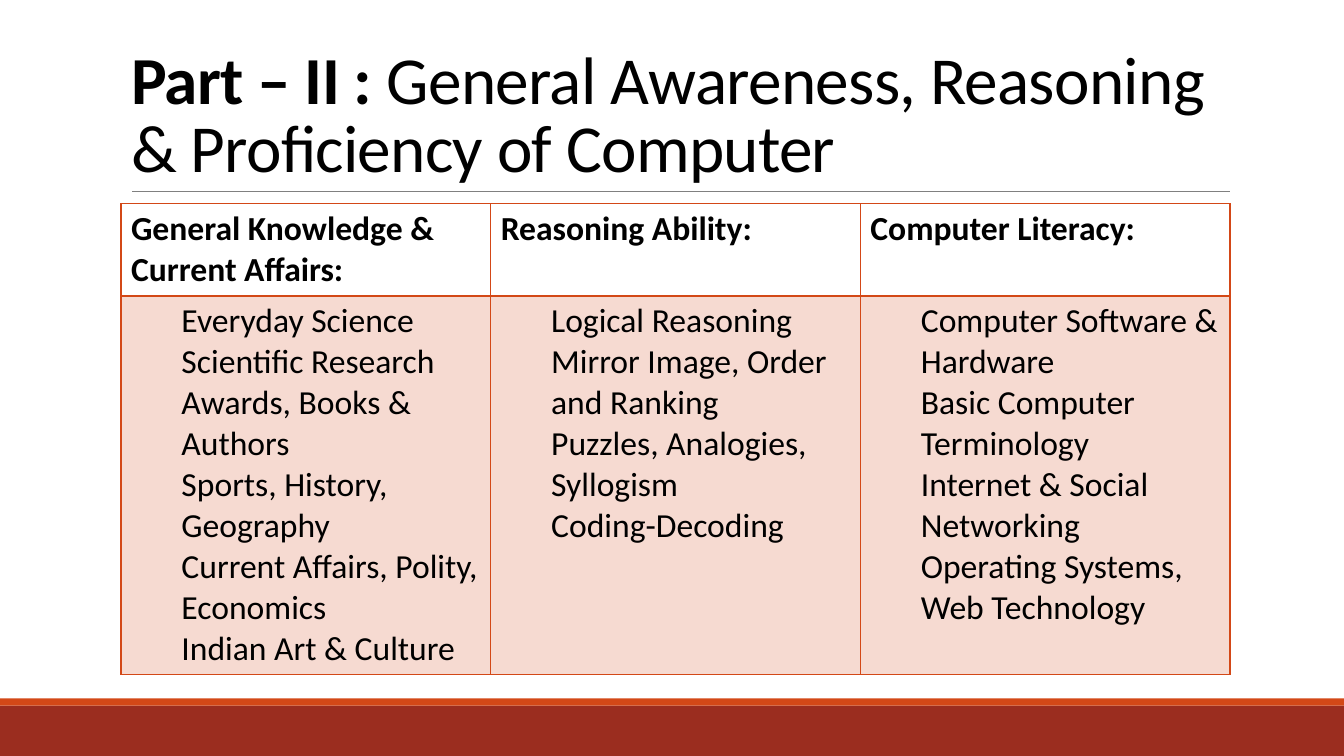
from lxml import etree
from pptx import Presentation
from pptx.dml.color import RGBColor
from pptx.enum.shapes import MSO_CONNECTOR, MSO_SHAPE
from pptx.enum.text import MSO_ANCHOR, MSO_AUTO_SIZE, PP_ALIGN
from pptx.oxml.ns import qn
from pptx.util import Inches, Pt

COLORS = {
    "text": "000000",
    "rule": "808080",
    "accent": "D34817",
    "footer": "9B2D1F",
    "tint": "F6DAD1",
}
SUBJECTS = {
    "General Knowledge & Current Affairs:": [
        "Everyday Science",
        "Scientific Research",
        "Awards, Books & Authors",
        "Sports, History, Geography",
        "Current Affairs, Polity, Economics",
        "Indian Art & Culture",
    ],
    "Reasoning Ability:": [
        "Logical Reasoning",
        "Mirror Image, Order and Ranking",
        "Puzzles, Analogies, Syllogism",
        "Coding-Decoding",
    ],
    "Computer Literacy:": [
        "Computer Software & Hardware",
        "Basic Computer Terminology",
        "Internet & Social Networking",
        "Operating Systems, Web Technology",
    ],
}


def rgb(name):
    return RGBColor.from_string(COLORS[name])


def add_text(p, text, size=24, bold=False, spacing=None):
    r = p.add_run()
    r.text = text
    r.font.name = "Calibri"
    r.font.size = Pt(size)
    r.font.bold = bold
    r.font.color.rgb = rgb("text")
    if spacing is not None:
        r.font._element.set("spc", str(int(spacing * 100)))


def add_band(slide, x, y, w, h, color):
    sp = slide.shapes.add_shape(
        MSO_SHAPE.RECTANGLE, Inches(x), Inches(y), Inches(w), Inches(h))
    sp.shadow.inherit = False
    sp.fill.solid()
    sp.fill.fore_color.rgb = rgb(color)
    sp.line.fill.background()


def add_footer(slide, x, y, w, h):
    """Dark band with a thin accent strip along its top."""
    strip = 0.07
    add_band(slide, x, y + strip, w, h - strip, "footer")
    add_band(slide, x, y, w, strip, "accent")


def add_title(slide, x, y, w, h):
    """Title placeholder with a thin rule under it."""
    title = slide.shapes.title
    title.left, title.top = Inches(x), Inches(y)
    title.width, title.height = Inches(w), Inches(h)
    tf = title.text_frame
    tf.word_wrap = True
    tf.auto_size = MSO_AUTO_SIZE.NONE
    tf.vertical_anchor = MSO_ANCHOR.BOTTOM
    p = tf.paragraphs[0]
    p.alignment = PP_ALIGN.LEFT
    p.line_spacing = 0.85
    add_text(p, "Part – II : ", size=48, bold=True, spacing=-0.5)
    add_text(p, "General Awareness, Reasoning & Proficiency of Computer",
             size=48, spacing=-0.5)

    bottom = Inches(y + h)
    rule = slide.shapes.add_connector(
        MSO_CONNECTOR.STRAIGHT, Inches(x + 0.11), bottom, Inches(x + w), bottom)
    rule.line.color.rgb = rgb("rule")
    rule.line.width = Pt(0.5)
    etree.SubElement(rule._element.spPr, qn("a:effectLst"))


def set_borders(cell, **widths):
    """Draw accent borders; widths in points keyed by L, R, T, B."""
    tc_pr = cell._tc.get_or_add_tcPr()
    for side in "LRTB":
        ln = etree.SubElement(tc_pr, qn(f"a:ln{side}"),
                              w=str(Pt(widths.get(side, 1))))
        fill = etree.SubElement(ln, qn("a:solidFill"))
        etree.SubElement(fill, qn("a:srgbClr"), val=COLORS["accent"])


def add_subject_table(slide, x, y, w, h):
    head_h = 0.91
    table = slide.shapes.add_table(
        2, len(SUBJECTS), Inches(x), Inches(y), Inches(w), Inches(h)).table
    table.horz_banding = False
    table.rows[0].height = Inches(head_h)
    table.rows[1].height = Inches(h - head_h)
    for col, (subject, topics) in enumerate(SUBJECTS.items()):
        table.columns[col].width = Inches(w / len(SUBJECTS))
        head, body = table.cell(0, col), table.cell(1, col)

        set_borders(head, B=2)
        head.fill.background()
        add_text(head.text_frame.paragraphs[0], subject, bold=True)

        set_borders(body, T=2)
        body.fill.solid()
        body.fill.fore_color.rgb = rgb("tint")
        tf = body.text_frame
        for i, topic in enumerate(topics):
            p = tf.add_paragraph() if i else tf.paragraphs[0]
            p.level = 1
            p_pr = p._p.get_or_add_pPr()
            p_pr.set("marL", str(Inches(0.5)))
            p_pr.set("indent", "0")
            add_text(p, topic)


def main():
    prs = Presentation()
    prs.slide_width, prs.slide_height = Inches(13.33), Inches(7.5)
    slide = prs.slides.add_slide(prs.slide_layouts[5])
    add_footer(slide, 0, 6.93, 13.33, 0.57)
    add_title(slide, 1.2, 0.31, 11, 1.59)
    add_subject_table(slide, 1.2, 2.02, 11, 4.67)
    prs.save("out.pptx")


if __name__ == "__main__":
    main()
